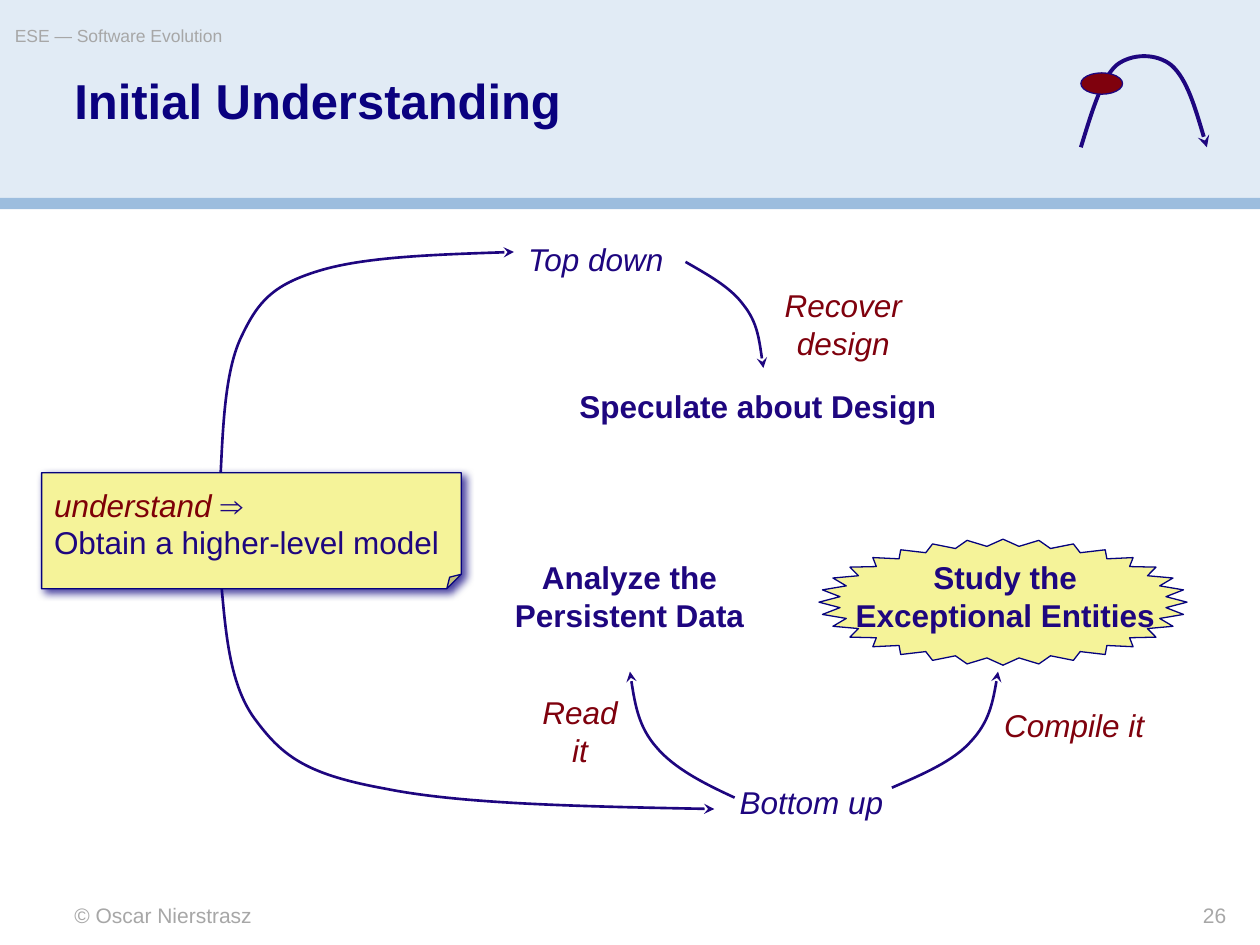
from typing import NamedTuple

from lxml import etree
from pptx import Presentation
from pptx import util as u
from pptx.dml.color import RGBColor
from pptx.enum import shapes, text
from pptx.oxml.ns import qn

NAVY, INK, RED, GRAY = "0A017F", "1E067F", "7F010D", "A7A7A7"
PALE, BLUE, CREAM, EDGE = "E1EBF5", "9CBDDE", "F5F399", "05027D"
KIND = shapes.MSO_SHAPE
ALIGN = text.PP_ALIGN


class Run(NamedTuple):
    words: str
    size: float
    hue: str
    bold: bool = False
    slant: bool = False


class Box(NamedTuple):
    x: float
    y: float
    w: float
    h: float


class Label(NamedTuple):
    box: Box
    run: Run
    wrap: bool = False


class Edge(NamedTuple):
    x: float
    y: float
    align: ALIGN
    size: float
    words: str


class Curve(NamedTuple):
    """A start point, then three points for each Bezier piece."""
    dots: list
    width: float = 1.5


def paint(form, hue: str) -> None:
    form.rgb = RGBColor.from_string(hue)


def place(shape, box: Box) -> None:
    shape.left, shape.top, shape.width, shape.height = map(u.Cm, box)


def add_run(para, run: Run) -> None:
    item = para.add_run()
    item.text = run.words
    font = item.font
    font.name, font.size = "Arial", u.Pt(run.size)
    font.bold, font.italic = run.bold, run.slant
    paint(font.color, run.hue)


def strip(frame) -> None:
    frame.margin_left = frame.margin_right = 0
    frame.margin_top = frame.margin_bottom = 0


def add_text(slide, box: Box, run: Run, align=ALIGN.CENTER, wrap=False):
    frame = slide.shapes.add_textbox(*map(u.Cm, box)).text_frame
    frame.word_wrap = wrap
    frame.paragraphs[0].alignment = align
    add_run(frame.paragraphs[0], run)
    return frame


def add_label(slide, label: Label) -> None:
    frame = add_text(slide, label.box, label.run, wrap=label.wrap)
    frame.vertical_anchor = text.MSO_ANCHOR.MIDDLE


def add_edge(slide, edge: Edge) -> None:
    """Add a small gray line of text at the rim of the slide."""
    box = Box(edge.x, edge.y, 24.72 - edge.x, 0.51)
    run = Run(edge.words, edge.size, GRAY)
    strip(add_text(slide, box, run, edge.align, wrap=True))


def add_form(slide, kind: KIND, box: Box, fill: str, line: str = ""):
    shape = slide.shapes.add_shape(kind, *map(u.Cm, box))
    shape.shadow.inherit = False
    shape.fill.solid()
    paint(shape.fill.fore_color, fill)
    if line:
        paint(shape.line.color, line)
        shape.line.width = u.Pt(0.75)
    else:
        shape.line.fill.background()
    return shape


def add_curve(slide, curve: Curve) -> None:
    dots = [(u.Cm(x), u.Cm(y)) for x, y in curve.dots]
    pen = slide.shapes.build_freeform(*dots[0])
    pen.add_line_segments(dots[1:], close=False)
    shape = pen.convert_to_shape()
    shape.shadow.inherit = False
    shape.fill.background()
    paint(shape.line.color, INK)
    shape.line.width = u.Pt(curve.width)
    steps = list(shape.element.iter(qn("a:lnTo")))
    for start in range(0, len(steps), 3):
        first, *rest = steps[start:start + 3]
        bend = etree.Element(qn("a:cubicBezTo"))
        first.addprevious(bend)
        for step in (first, *rest):
            bend.append(step[0])
            step.getparent().remove(step)
    line = shape.element.spPr.find(qn("a:ln"))
    etree.SubElement(line, qn("a:tailEnd"), type="stealth")


def add_shade(shape) -> None:
    """Cast a soft navy shadow to the lower right."""
    spot = shape.element.spPr.find(qn("a:effectLst"))
    cast = etree.SubElement(
        spot, qn("a:outerShdw"), blurRad=str(u.Pt(5)), dist=str(u.Pt(3)),
        dir=str(45 * 60000), algn="ctr", rotWithShape="0")
    hue = etree.SubElement(cast, qn("a:srgbClr"), val=NAVY)
    etree.SubElement(hue, qn("a:alpha"), val="75000")


def add_note(slide) -> None:
    note = add_form(slide, KIND.FOLDED_CORNER, Box(0.84, 9.53, 8.46, 2.34), CREAM, EDGE)
    # This preset has no adjustments in python-pptx
    fold = next(note.element.iter(qn("a:avLst")))
    etree.SubElement(fold, qn("a:gd"), name="adj", fmla="val 12500")
    add_shade(note)
    frame = note.text_frame
    frame.word_wrap = True
    frame.vertical_anchor = text.MSO_ANCHOR.MIDDLE
    lines = [
        [Run("understand ", 18, "7E0007", slant=True), Run("⇒", 18, INK)],
        [Run("Obtain a higher-level model", 18, INK)],
    ]
    for i, runs in enumerate(lines):
        para = frame.add_paragraph() if i else frame.paragraphs[0]
        para.alignment = ALIGN.LEFT
        for run in runs:
            add_run(para, run)


def add_title(slide) -> None:
    title = slide.shapes.title
    slide.shapes.element.append(title.element)  # in front of the band
    place(title, Box(1.5, 1.55, 22.43, 2.26))
    frame = title.text_frame
    strip(frame)
    frame.vertical_anchor = text.MSO_ANCHOR.TOP
    para = frame.paragraphs[0]
    para.alignment, para.line_spacing = ALIGN.LEFT, 0.9
    add_run(para, Run("Initial Understanding", 28, NAVY, bold=True))


def way(words: str, hue: str = RED) -> Run:
    return Run(words, 18, hue, slant=True)


def goal(words: str) -> Run:
    return Run(words, 18, INK, bold=True)


EDGES = [
    Edge(0.3, 0.51, ALIGN.LEFT, 10, "ESE — Software Evolution"),
    Edge(1.5, 18.19, ALIGN.LEFT, 12, "© Oscar Nierstrasz"),
    Edge(20.96, 18.19, ALIGN.RIGHT, 12, "26"),
]
LABELS = [
    Label(Box(10.36, 4.72, 3.3, 1.02), way("Top down", INK)),
    Label(Box(14.66, 15.65, 3.4, 1.02), way("Bottom up", INK)),
    Label(Box(10.44, 14.22, 2.51, 1.02), way("Read it")),
    Label(Box(19.99, 14.1, 3.33, 1.02), way("Compile it")),
    Label(Box(15.44, 5.64, 3.12, 1.78), way("Recover design"), True),
    Label(Box(11.43, 7.67, 7.7, 1.02), goal("Speculate about Design")),
    Label(Box(9.73, 11.13, 5.92, 1.78), goal("Analyze the Persistent Data"), True),
    Label(Box(16.94, 11.13, 6.65, 1.78), goal("Study the Exceptional Entities"), True),
]
CURVES = [
    Curve([(14.81, 16.08), (14.2, 15.8), (13.59, 15.49), (13.23, 15.06),
           (12.88, 14.66), (12.78, 14.1), (12.7, 13.54)]),
    Curve([(17.98, 15.88), (18.62, 15.6), (19.23, 15.34), (19.58, 14.94),
           (19.94, 14.55), (20.04, 14.05), (20.12, 13.54)]),
    Curve([(13.82, 5.28), (14.27, 5.54), (14.73, 5.79), (14.99, 6.15),
           (15.27, 6.5), (15.32, 6.96), (15.39, 7.42)]),
    Curve([(4.45, 9.53), (4.5, 8.48), (4.55, 7.42), (4.88, 6.76), (5.21, 6.07),
           (5.51, 5.74), (6.43, 5.46), (7.34, 5.18), (8.86, 5.13), (10.36, 5.08)]),
    Curve([(4.45, 11.63), (4.55, 12.75), (4.62, 13.84), (5.18, 14.55), (5.72, 15.27),
           (6.22, 15.62), (7.77, 15.9), (9.3, 16.21), (11.84, 16.26), (14.4, 16.31)]),
    Curve([(21.79, 2.97), (22, 2.29), (22.2, 1.6), (22.5, 1.32), (22.81, 1.07),
           (23.32, 1.07), (23.62, 1.32), (23.93, 1.6), (24.13, 2.29), (24.33, 2.97)], 2.25),
]


def main() -> None:
    deck = Presentation()
    deck.slide_width, deck.slide_height = u.Cm(25.4), u.Cm(19.05)
    slide = deck.slides.add_slide(deck.slide_layouts[5])
    add_form(slide, KIND.RECTANGLE, Box(0, 0, 25.4, 4.01), PALE)
    add_form(slide, KIND.RECTANGLE, Box(0, 3.99, 25.4, 0.23), BLUE)
    add_title(slide)
    star = add_form(slide, KIND.STAR_32_POINT, Box(16.51, 10.87, 7.42, 2.54), CREAM, EDGE)
    star.adjustments[0] = 0.445
    for draw, items in ((add_edge, EDGES), (add_label, LABELS), (add_curve, CURVES)):
        for item in items:
            draw(slide, item)
    add_note(slide)
    add_form(slide, KIND.OVAL, Box(21.79, 1.47, 0.84, 0.43), RED, INK)
    deck.save("out.pptx")


if __name__ == "__main__":
    main()
